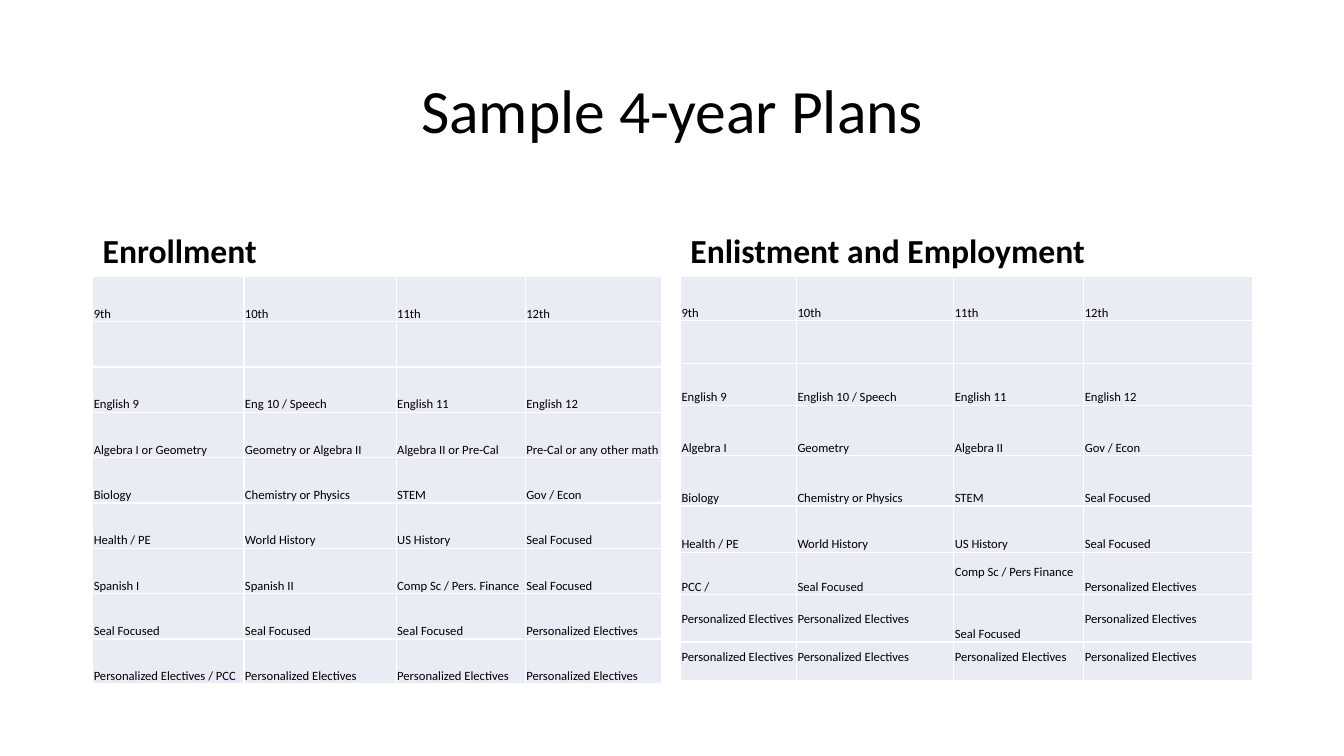
import pptx
import pptx.dml.color
import pptx.enum.text
import pptx.oxml
import pptx.oxml.ns
import pptx.util
from dataclasses import dataclass

Inches = pptx.util.Inches
Pt = pptx.util.Pt
RGB = pptx.dml.color.RGBColor
Anchor = pptx.enum.text.MSO_ANCHOR
Align = pptx.enum.text.PP_ALIGN


@dataclass
class Theme:
    font: str = "Calibri"
    ink: str = "000000"
    cell: str = "E9EBF5"
    grid: str = "FFFFFF"
    title_size: int = 44
    heading_size: int = 24
    course_size: int = 9


theme = Theme()


def write(frame, text, size, bold=False, align=Align.LEFT, spacing=None, before=None):
    paragraph = frame.paragraphs[0]
    paragraph.alignment = align
    paragraph.line_spacing = spacing
    paragraph.space_before = before
    run = paragraph.add_run()
    run.text = text
    run.font.name = theme.font
    run.font.size = Pt(size)
    run.font.bold = bold
    run.font.color.rgb = RGB.from_string(theme.ink)


def draw_grid_lines(cell):
    properties = cell._tc.get_or_add_tcPr()
    for side in ("lnL", "lnR", "lnT", "lnB"):
        properties.append(pptx.oxml.parse_xml(
            f'<a:{side} {pptx.oxml.ns.nsdecls("a")} w="{Pt(1)}"><a:solidFill>'
            f'<a:srgbClr val="{theme.grid}"/></a:solidFill></a:{side}>'))


electives = "Personalized Electives"
seal = "Seal Focused"
grades = ("9th", "10th", "11th", "12th")
gap = ("", "", "", "")

plans = [
    dict(
        heading="Enrollment", left=0.92, width=5.64,
        columns=(1.5, 1.51, 1.28, 1.35),
        rows=(0.45,) * 8 + (0.44,),
        courses=(
            grades,
            gap,
            ("English 9", "Eng 10 / Speech", "English 11", "English 12"),
            ("Algebra I or Geometry", "Geometry or Algebra II",
             "Algebra II or Pre-Cal", "Pre-Cal or any other math"),
            ("Biology", "Chemistry or Physics", "STEM", "Gov / Econ"),
            ("Health / PE", "World History", "US History", seal),
            ("Spanish I", "Spanish II", "Comp Sc / Pers. Finance", seal),
            (seal, seal, seal, electives),
            (electives + " / PCC", electives, electives, electives),
        ),
        raised=(),
    ),
    dict(
        heading="Enlistment and Employment", left=6.75, width=5.67,
        columns=(1.15, 1.56, 1.29, 1.67),
        rows=(0.44, 0.43, 0.41, 0.5, 0.5, 0.46, 0.42, 0.47, 0.38),
        courses=(
            grades,
            gap,
            ("English 9", "English 10 / Speech", "English 11", "English 12"),
            ("Algebra I", "Geometry", "Algebra II", "Gov / Econ"),
            ("Biology", "Chemistry or Physics", "STEM", seal),
            ("Health / PE", "World History", "US History", seal),
            ("PCC /", seal, "Comp Sc / Pers Finance", electives),
            (electives, electives, seal, electives),
            (electives, electives, electives, electives),
        ),
        raised=((6, 2), (7, 0), (7, 1), (7, 3), (8, 0), (8, 1), (8, 2), (8, 3)),
    ),
]

deck = pptx.Presentation()
deck.slide_width = Inches(13.33)
deck.slide_height = Inches(7.5)
slide = deck.slides.add_slide(deck.slide_layouts[6])

title = slide.shapes.add_textbox(Inches(0.92), Inches(0.4), Inches(11.5), Inches(1.45)).text_frame
title.word_wrap = True
title.vertical_anchor = Anchor.MIDDLE
write(title, "Sample 4-year Plans", theme.title_size, align=Align.CENTER, spacing=0.9)

for plan in plans:
    left, width = Inches(plan["left"]), Inches(plan["width"])
    heading = slide.shapes.add_textbox(left, Inches(1.84), width, Inches(0.9)).text_frame
    heading.word_wrap = True
    heading.vertical_anchor = Anchor.BOTTOM
    write(heading, plan["heading"], theme.heading_size, bold=True, spacing=0.9, before=Pt(10))

    schedule = slide.shapes.add_table(
        len(plan["rows"]), len(plan["columns"]), left, Inches(2.74),
        width, Inches(sum(plan["rows"]))).table
    schedule.first_row = False
    schedule.horz_banding = False
    for column, column_width in zip(schedule.columns, plan["columns"]):
        column.width = Inches(column_width)
    for row, row_height in zip(schedule.rows, plan["rows"]):
        row.height = Inches(row_height)

    for row_index, courses in enumerate(plan["courses"]):
        for grade_index, course in enumerate(courses):
            cell = schedule.cell(row_index, grade_index)
            draw_grid_lines(cell)
            cell.fill.solid()
            cell.fill.fore_color.rgb = RGB.from_string(theme.cell)
            cell.vertical_anchor = Anchor.BOTTOM
            cell.margin_left = cell.margin_right = cell.margin_top = Inches(0.01)
            is_raised = (row_index, grade_index) in plan["raised"]
            cell.margin_bottom = Inches(0.15 if is_raised else 0)
            if course:
                write(cell.text_frame, course, theme.course_size)

deck.save("out.pptx")
